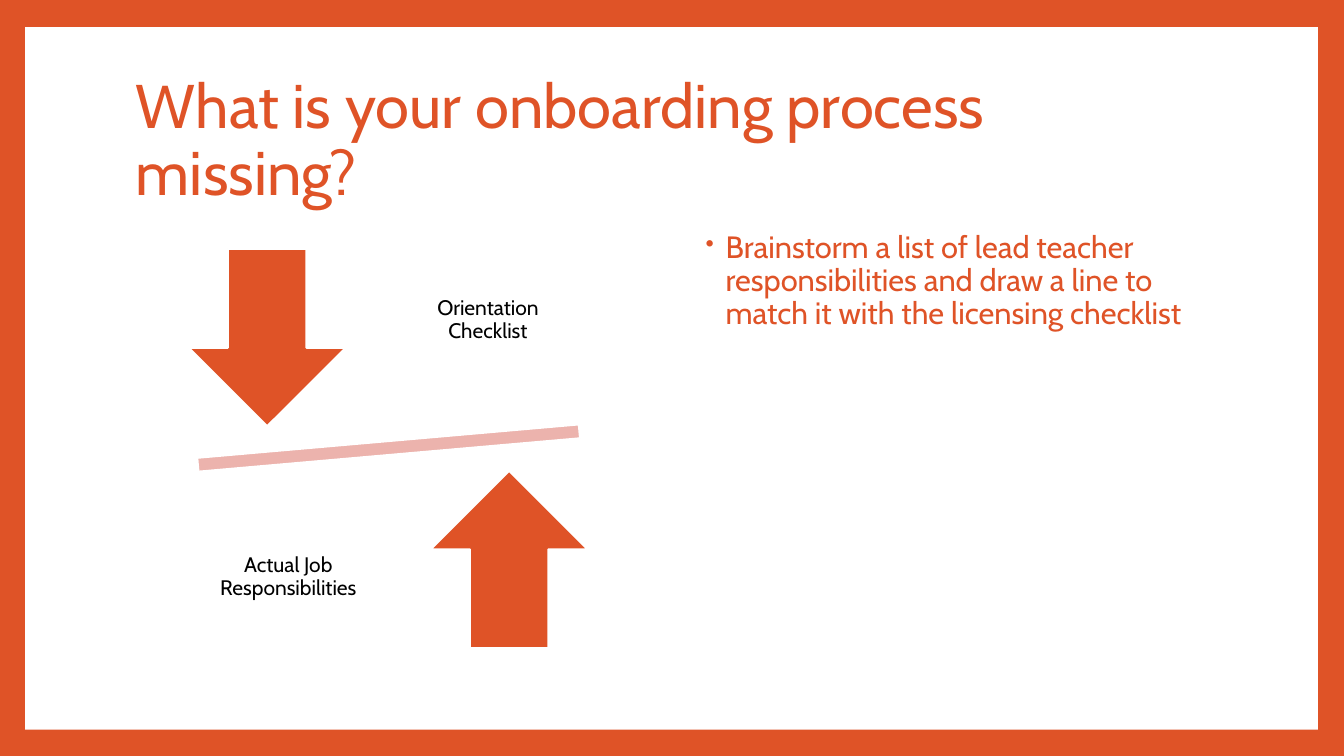
import pptx
import pptx.dml.color
import pptx.enum.shapes
import pptx.enum.text
import pptx.util
from lxml import etree

Inches = pptx.util.Inches
Pt = pptx.util.Pt
SHAPE = pptx.enum.shapes.MSO_SHAPE
ALIGN = pptx.enum.text.PP_ALIGN
ANCHOR = pptx.enum.text.MSO_ANCHOR

ORANGE, PINK, WHITE, BLACK = "DF5327", "ECB3AD", "FFFFFF", "000000"


def color(value):
    return pptx.dml.color.RGBColor.from_string(value)


class Deck:
    """Holds the style and the current slide."""
    font = "Cabin"
    line_spacing = 0.9

    def __init__(self, prs):
        self.slide = prs.slides.add_slide(prs.slide_layouts[6])

    def background(self, fill):
        bg = self.slide.background.fill
        bg.solid()
        bg.fore_color.rgb = color(fill)

    def shape(self, kind, box, fill, line=None, rotation=0):
        sp = self.slide.shapes.add_shape(kind, *map(Inches, box))
        sp.shadow.inherit = False
        sp.rotation = rotation
        sp.fill.solid()
        sp.fill.fore_color.rgb = color(fill)
        if line:
            sp.line.color.rgb = color(line)
            sp.line.width = Pt(1.5)
        else:
            sp.line.fill.background()
        return sp

    def text(self, text, box, size, fill, align=ALIGN.LEFT,
             anchor=ANCHOR.MIDDLE, inset=None):
        sp = self.slide.shapes.add_textbox(*map(Inches, box))
        tf = sp.text_frame
        tf.word_wrap = True
        tf.vertical_anchor = anchor
        if inset is not None:
            tf.margin_left = tf.margin_right = Inches(inset)
            tf.margin_top = tf.margin_bottom = Inches(inset)
        tf.text = text
        p = tf.paragraphs[0]
        p.alignment = align
        p.line_spacing = self.line_spacing
        r = p.runs[0]
        r.font.name = self.font
        r.font.size = Pt(size)
        r.font.color.rgb = color(fill)
        return p

    def bullet(self, text, box, size, fill):
        p = self.text(text, box, size, fill, anchor=ANCHOR.TOP)
        p.space_before = Pt(14)
        pPr = p._p.get_or_add_pPr()
        pPr.set("marL", str(Inches(0.25)))
        pPr.set("indent", str(Inches(-0.2)))
        ns = pptx.oxml.ns.qn
        bu_color = etree.SubElement(pPr, ns("a:buClr"))
        etree.SubElement(bu_color, ns("a:srgbClr"), val=fill)
        etree.SubElement(pPr, ns("a:buSzPct"), val="80000")
        etree.SubElement(pPr, ns("a:buChar"), char="•")


def main():
    prs = pptx.Presentation()
    prs.slide_width, prs.slide_height = Inches(13.33), Inches(7.5)
    deck = Deck(prs)

    # Frame and title
    deck.background(ORANGE)
    deck.shape(SHAPE.RECTANGLE, (0.25, 0.27, 12.82, 6.97), WHITE)
    deck.text("What is your onboarding process missing?",
              (1.25, 0.67, 10.8, 1.48), 44, ORANGE)

    # Balance beam with opposing arrows and their labels
    deck.shape(SHAPE.MATH_MINUS, (1.27, 4.15, 5.17, 0.59), PINK, WHITE, 355)
    sides = [
        (SHAPE.DOWN_ARROW, 1.87, 2.47, "Orientation Checklist", 4.01, 2.25),
        (SHAPE.UP_ARROW, 4.27, 4.67, "Actual Job Responsibilities", 2.03, 4.8),
    ]
    for arrow, arrow_x, arrow_y, label, label_x, label_y in sides:
        deck.shape(arrow, (arrow_x, arrow_y, 1.56, 1.76), ORANGE, WHITE)
        deck.text(label, (label_x, label_y, 1.66, 1.85), 15, BLACK,
                  align=ALIGN.CENTER, inset=0.12)

    # Activity
    deck.bullet("Brainstorm a list of lead teacher responsibilities and draw "
                "a line to match it with the licensing checklist",
                (6.85, 2.25, 5.2, 4.4), 22, ORANGE)

    prs.save("out.pptx")


if __name__ == "__main__":
    main()
